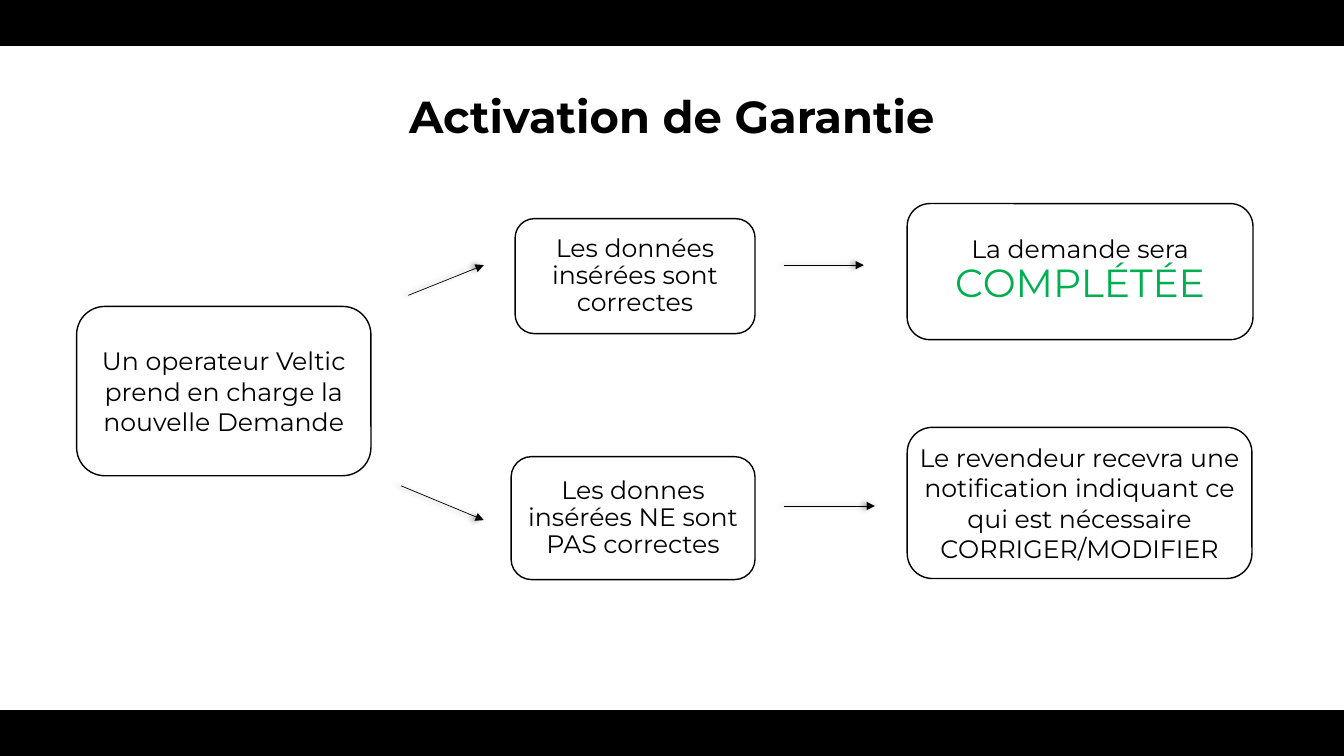
from lxml import etree
from pptx import Presentation
from pptx.dml.color import RGBColor
from pptx.enum.shapes import MSO_CONNECTOR as Connector, MSO_SHAPE as Shape
from pptx.enum.text import MSO_ANCHOR as Anchor, PP_ALIGN as Align
from pptx.oxml import parse_xml
from pptx.oxml.ns import nsdecls, qn
from pptx.util import Inches, Pt

WIDTH, HEIGHT = Inches(13.33), Inches(7.5)
BLACK, WHITE, GREEN = "000000", "FFFFFF", "00B050"
BODY = {"name": "Montserrat", "size": Pt(18), "bold": False}
TITLE = BODY | {"size": Pt(32), "bold": True}
LARGE = BODY | {"size": Pt(28)}
BARS = [(0, 0, 100, 6), (0, 94, 100, 6)]
TITLE_BOX = (0, 11.87, 100, 19.33)
STEPS = [
    ((5.7, 40.53, 21.9, 22.4), 1, 0.1,
     [[("Un operateur Veltic prend en charge la", BODY, BLACK)],
      [("nouvelle Demande", BODY, BLACK)]]),
    ((38.33, 28.93, 17.85, 15.2), 0.9, 0.1,
     [[("Les données insérées sont correctes", BODY, BLACK)]]),
    ((38.03, 60.4, 18.15, 16.27), 0.9, 0.1,
     [[("Les donnes insérées NE sont PAS correctes", BODY, BLACK)]]),
    ((67.5, 26.93, 25.73, 18), 0.9, 0.1,
     [[("La demande sera ", BODY, BLACK), ("COMPLÉTÉE", LARGE, GREEN)]]),
    ((67.5, 56.53, 25.65, 20), 1, 0.02,
     [[("Le revendeur recevra une notification indiquant ce qui est nécessaire "
        "CORRIGER/MODIFIER", BODY, BLACK)]]),
]
ARROWS = [
    (30.38, 39.07, 36, 35.07),
    (29.85, 64.27, 36, 68.8),
    (58.35, 35.07, 64.28, 35.07),
    (58.35, 66.93, 65.1, 66.93),
]


def color(value):
    """Turn a hex string into a colour."""
    return RGBColor.from_string(value)


def place(box):
    """Turn percentages of the slide into lengths."""
    return [round(share * side / 100) for share, side in zip(box, (WIDTH, HEIGHT) * 2)]


def set_all(target, values):
    """Set every attribute named in a dict."""
    for name, value in values.items():
        setattr(target, name, value)


def write(frame, paragraphs, spacing):
    """Fill a text frame with centred paragraphs of formatted spans."""
    for index, spans in enumerate(paragraphs):
        para = frame.add_paragraph() if index else frame.paragraphs[0]
        set_all(para, {"alignment": Align.CENTER, "line_spacing": spacing,
                       "space_before": Pt(0)})
        for text, style, ink in spans:
            span = para.add_run()
            span.text = text
            set_all(span.font, style)
            span.font.color.rgb = color(ink)


def add_panel(page, box, kind, fill):
    """Add a filled shape with a thin black outline."""
    panel = page.shapes.add_shape(kind, *place(box))
    panel.shadow.inherit = False
    panel.fill.solid()
    panel.fill.fore_color.rgb = color(fill)
    panel.line.color.rgb = color(BLACK)
    panel.line.width = Pt(1)
    return panel


def add_title(page, box):
    """Place and format the slide title."""
    title = page.shapes.title
    set_all(title, dict(zip(("left", "top", "width", "height"), place(box))))
    set_all(title.text_frame, {"vertical_anchor": Anchor.TOP, "word_wrap": True})
    write(title.text_frame, [[("Activation de Garantie", TITLE, BLACK)]], 0.9)


def add_step(page, box, spacing, margin, paragraphs):
    """Add one rounded step of the process with its text."""
    frame = add_panel(page, box, Shape.ROUNDED_RECTANGLE, WHITE).text_frame
    set_all(frame, {"word_wrap": True, "vertical_anchor": Anchor.MIDDLE,
                    "margin_left": Inches(margin), "margin_right": Inches(margin)})
    write(frame, paragraphs, spacing)


def add_arrow(page, ends):
    """Add a thin arrow with a soft shadow."""
    arrow = page.shapes.add_connector(Connector.STRAIGHT, *place(ends))
    arrow.line.color.rgb = color(BLACK)
    arrow.line.width = Pt(0.5)
    etree.SubElement(arrow.line._get_or_add_ln(), qn("a:tailEnd"), type="triangle")
    arrow._element.spPr.append(parse_xml(
        f'<a:effectLst {nsdecls("a")}><a:outerShdw blurRad="{Pt(4)}" dist="{Pt(3)}" '
        f'dir="10800000"><a:srgbClr val="{BLACK}"><a:alpha val="40000"/></a:srgbClr>'
        '</a:outerShdw></a:effectLst>'))


def build_process(deck):
    """Build the warranty activation slide."""
    page = deck.slides.add_slide(deck.slide_layouts[5])
    for box in BARS:
        add_panel(page, box, Shape.RECTANGLE, BLACK)
    add_title(page, TITLE_BOX)
    for step in STEPS:
        add_step(page, *step)
    for ends in ARROWS:
        add_arrow(page, ends)


def main():
    """Create and save the deck."""
    deck = Presentation()
    set_all(deck, {"slide_width": WIDTH, "slide_height": HEIGHT})
    build_process(deck)
    deck.save("out.pptx")


if __name__ == "__main__":
    main()
